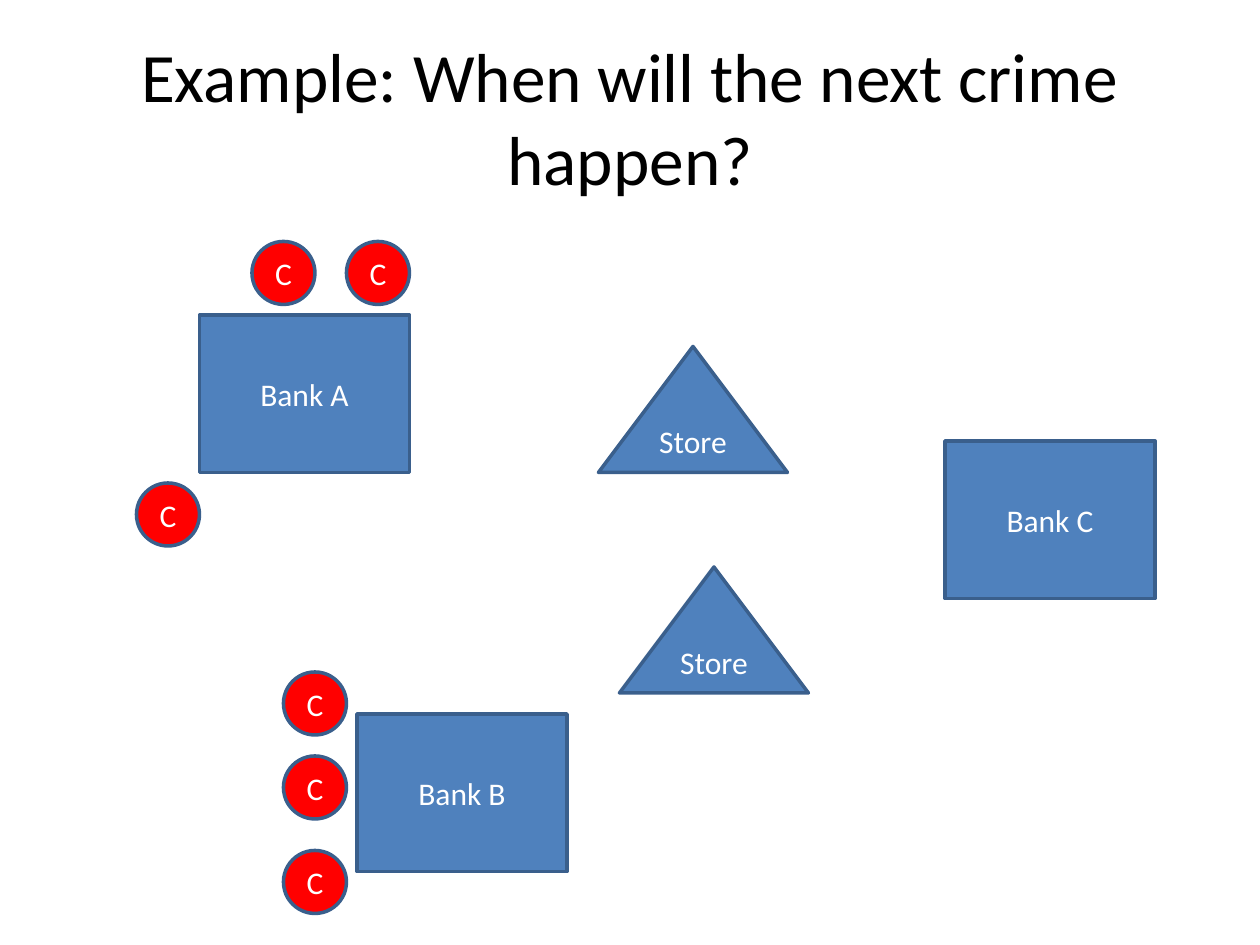
import pptx
import pptx.util
import pptx.dml.color
import pptx.enum.shapes
import pptx.enum.text

COLORS = {"building": "4F81BD", "crime": "FF0000", "outline": "3A5F8C",
          "label": "FFFFFF", "title": "000000"}
SHAPES = pptx.enum.shapes.MSO_SHAPE
CELLS_PER_INCH = 12

BANKS = [("Bank A", 19, 30), ("Bank B", 34, 68), ("Bank C", 90, 42)]
STORES = [(57, 33), (59, 54)]
CRIMES = [(24, 23), (33, 23), (13, 46), (27, 64), (27, 72), (27, 81)]


def cells(n):
    """Convert a count of grid cells to a length."""
    return pptx.util.Inches(n / CELLS_PER_INCH)


def rgb(name):
    """Look up a named colour."""
    return pptx.dml.color.RGBColor.from_string(COLORS[name])


def format_text(tf, size, color):
    """Centre a one-paragraph text frame and set its font."""
    tf.word_wrap = True
    tf.auto_size = pptx.enum.text.MSO_AUTO_SIZE.NONE
    tf.vertical_anchor = pptx.enum.text.MSO_ANCHOR.MIDDLE
    p = tf.paragraphs[0]
    p.alignment = pptx.enum.text.PP_ALIGN.CENTER
    p.font.name = "Calibri"
    p.font.size = pptx.util.Pt(size)
    p.font.color.rgb = rgb(color)


def add_title(s, text):
    """Place and format the slide title."""
    sp = s.shapes.title
    sp.left, sp.top, sp.width, sp.height = map(cells, (6, 3.6, 108, 15))
    sp.text_frame.text = text
    format_text(sp.text_frame, 39.6, "title")


def add_marker(s, kind, text, col, row, cols, rows, fill):
    """Add a labelled, outlined shape on the map grid."""
    sp = s.shapes.add_shape(kind, *map(cells, (col, row, cols, rows)))
    sp.shadow.inherit = False
    sp.fill.solid()
    sp.fill.fore_color.rgb = rgb(fill)
    sp.line.color.rgb = rgb("outline")
    sp.line.width = pptx.util.Pt(2)
    sp.text_frame.text = text
    format_text(sp.text_frame, 18, "label")


def main():
    """Build the crime map slide."""
    prs = pptx.Presentation()
    prs.slide_width, prs.slide_height = cells(120), cells(90)
    s = prs.slides.add_slide(prs.slide_layouts[5])
    add_title(s, "Example: When will the next crime happen?")
    for name, col, row in BANKS:
        add_marker(s, SHAPES.RECTANGLE, name, col, row, 20, 15, "building")
    for col, row in STORES:
        add_marker(s, SHAPES.ISOSCELES_TRIANGLE, "Store", col, row, 18, 12, "building")
    for col, row in CRIMES:
        add_marker(s, SHAPES.OVAL, "C", col, row, 6, 6, "crime")
    prs.save("out.pptx")


if __name__ == "__main__":
    main()
